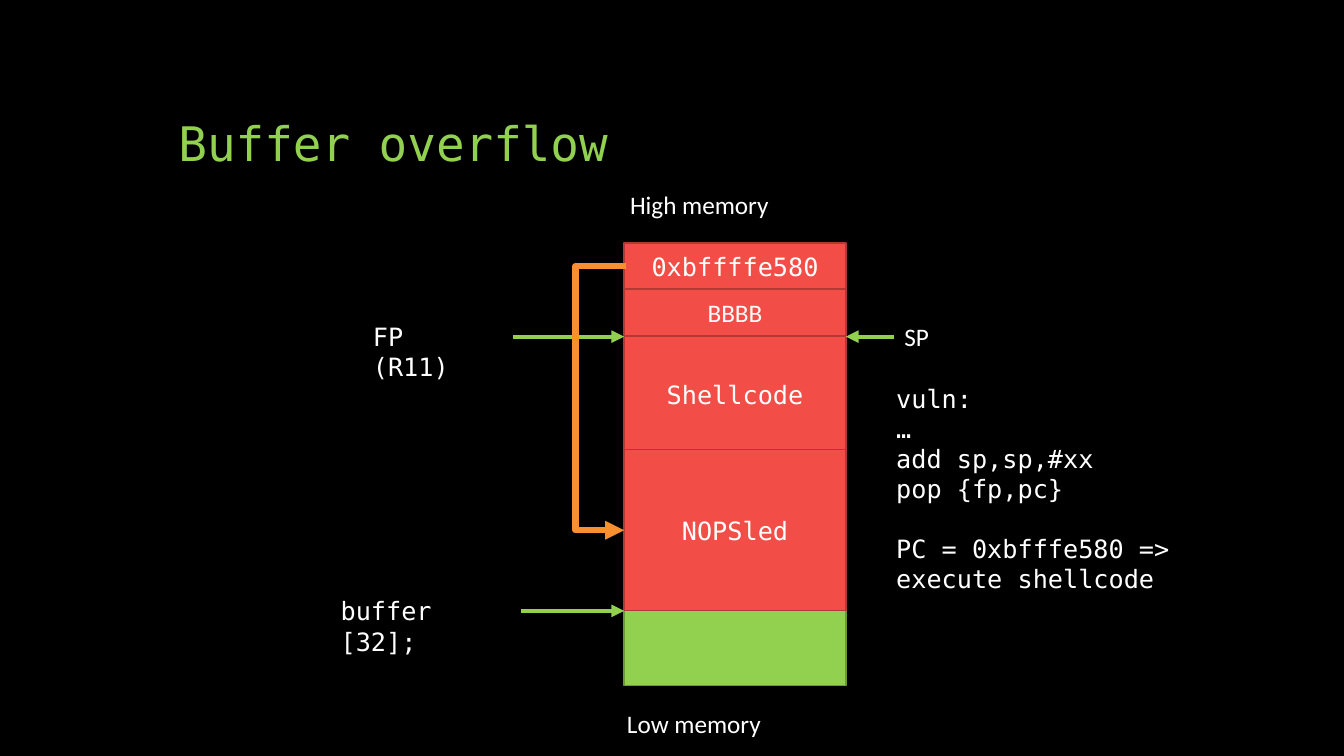
from dataclasses import dataclass

from lxml.etree import SubElement
from pptx import Presentation
from pptx.dml.color import RGBColor
from pptx.enum.shapes import MSO_CONNECTOR, MSO_SHAPE
from pptx.enum.text import MSO_ANCHOR, MSO_AUTO_SIZE, PP_ALIGN
from pptx.oxml.ns import qn
from pptx.util import Inches, Pt


@dataclass(frozen=True)
class Theme:
    """Colours, fonts and sizes of the slide."""
    back: str = "000000"
    text: str = "FFFFFF"
    green: str = "92D050"
    moss: str = "6C9A3B"
    red: str = "F34D47"
    rust: str = "B43935"
    orange: str = "FA8F30"
    sans: str = "Calibri"
    mono: str = "DejaVu Sans Mono"
    head: int = 34
    body: int = 18


THEME = Theme()
STACK_LEFT, STACK_WIDTH = 6.19, 2.2


def rgb(code):
    """Turn a hex code into a colour."""
    return RGBColor.from_string(code)


def box(left, top, width, height):
    """Turn four numbers into lengths."""
    return [Inches(n) for n in (left, top, width, height)]


def write(para, text, font, size=THEME.body, color=THEME.text):
    """Add one formatted run to a paragraph."""
    run = para.add_run()
    run.text = text
    run.font.name = font
    run.font.size = Pt(size)
    run.font.color.rgb = rgb(color)


def add_title(slide, text):
    """Place and fill the title placeholder."""
    title = slide.shapes.title
    title.left, title.top, title.width, title.height = box(1.67, 0.5, 10, 1.25)
    frame = title.text_frame
    frame.auto_size = MSO_AUTO_SIZE.NONE
    frame.vertical_anchor = MSO_ANCHOR.BOTTOM
    para = frame.paragraphs[0]
    para.alignment = PP_ALIGN.LEFT
    para.line_spacing = 0.9
    write(para, text, THEME.mono, THEME.head, THEME.green)


def add_cell(slide, top, height, fill, edge, text="", font=THEME.mono):
    """Draw one block of the memory stack."""
    cell = slide.shapes.add_shape(
        MSO_SHAPE.RECTANGLE, *box(STACK_LEFT, top, STACK_WIDTH, height))
    cell.shadow.inherit = False
    cell.fill.solid()
    cell.fill.fore_color.rgb = rgb(fill)
    cell.line.color.rgb = rgb(edge)
    cell.line.width = Pt(1)
    if text:
        frame = cell.text_frame
        frame.vertical_anchor = MSO_ANCHOR.MIDDLE
        para = frame.paragraphs[0]
        para.alignment = PP_ALIGN.CENTER
        write(para, text, font)


def add_label(slide, place, lines, font, gap=None):
    """Add a text box, with space before the line numbered gap."""
    label = slide.shapes.add_textbox(*box(*place))
    frame = label.text_frame
    frame.word_wrap = True
    frame.auto_size = MSO_AUTO_SIZE.SHAPE_TO_FIT_TEXT
    for index, line in enumerate(lines):
        para = frame.add_paragraph() if index else frame.paragraphs[0]
        if index == gap:
            para.space_before = Pt(21)
        write(para, line, font)
    return label


def add_arrow(slide, start, end, color, width, kind=MSO_CONNECTOR.STRAIGHT):
    """Draw a connector with a triangle at its end."""
    ends = [Inches(n) for n in (*start, *end)]
    arrow = slide.shapes.add_connector(kind, *ends)
    arrow.line.color.rgb = rgb(color)
    arrow.line.width = Pt(width)
    props = arrow.element.spPr
    SubElement(props.find(qn("a:ln")), qn("a:tailEnd"), type="triangle")
    SubElement(props, qn("a:effectLst"))
    return arrow


def add_jump(slide, start, end, bend):
    """Draw the elbow arrow whose long side lies at x = bend."""
    arrow = add_arrow(slide, start, end, THEME.orange, 4.5, MSO_CONNECTOR.ELBOW)
    ratio = (start[0] - bend) / (start[0] - end[0])
    guides = arrow.element.spPr.find(qn("a:prstGeom")).get_or_add_avLst()
    SubElement(guides, qn("a:gd"), name="adj1",
               fmla=f"val {round(ratio * 100000)}")


def main():
    """Build the slide and save it."""
    deck = Presentation()
    deck.slide_width, deck.slide_height = Inches(13.33), Inches(7.5)
    slide = deck.slides.add_slide(deck.slide_layouts[5])
    slide.background.fill.solid()
    slide.background.fill.fore_color.rgb = rgb(THEME.back)
    add_title(slide, "Buffer overflow")

    add_cell(slide, 3.34, 3.46, THEME.green, THEME.moss)
    for top, height, text, font in (
            (2.41, 0.46, "0xbffffe580", THEME.mono),
            (2.87, 0.46, "BBBB", THEME.sans),
            (3.34, 1.14, "Shellcode", THEME.mono),
            (4.46, 1.6, "NOPSled", THEME.mono)):
        add_cell(slide, top, height, THEME.red, THEME.rust, text, font)

    add_label(slide, (6.15, 1.83, 2.28, 0.4), ["High memory"], THEME.sans)
    add_label(slide, (6.12, 6.98, 2.28, 0.4), ["Low memory"], THEME.sans)
    add_label(slide, (3.6, 3.14, 1.33, 0.4), ["FP (R11)"], THEME.mono)
    stack = add_label(slide, (8.87, 3.14, 0.55, 0.4), ["SP"], THEME.sans)
    buffer = add_label(slide, (3.28, 5.86, 1.89, 0.4), ["buffer [32];"],
                       THEME.mono)
    code = ["vuln:", "…", "add sp,sp,#xx", "pop {fp,pc}",
            "PC = 0xbfffe580 => execute shellcode"]
    add_label(slide, (8.79, 3.75, 3.62, 2.22), code, THEME.mono, gap=4)

    right = STACK_LEFT + STACK_WIDTH
    for start, end, label, side in (
            ((5.09, 3.34), (STACK_LEFT, 3.34), None, None),
            ((8.87, 3.34), (right, 3.34), stack, 1),
            ((5.17, 6.06), (STACK_LEFT, 6.06), buffer, 3)):
        arrow = add_arrow(slide, start, end, THEME.green, 3)
        if label:
            arrow.begin_connect(label, side)
    add_jump(slide, (6.21, 2.64), (STACK_LEFT, 5.26), bend=5.71)
    deck.save("out.pptx")


if __name__ == "__main__":
    main()
